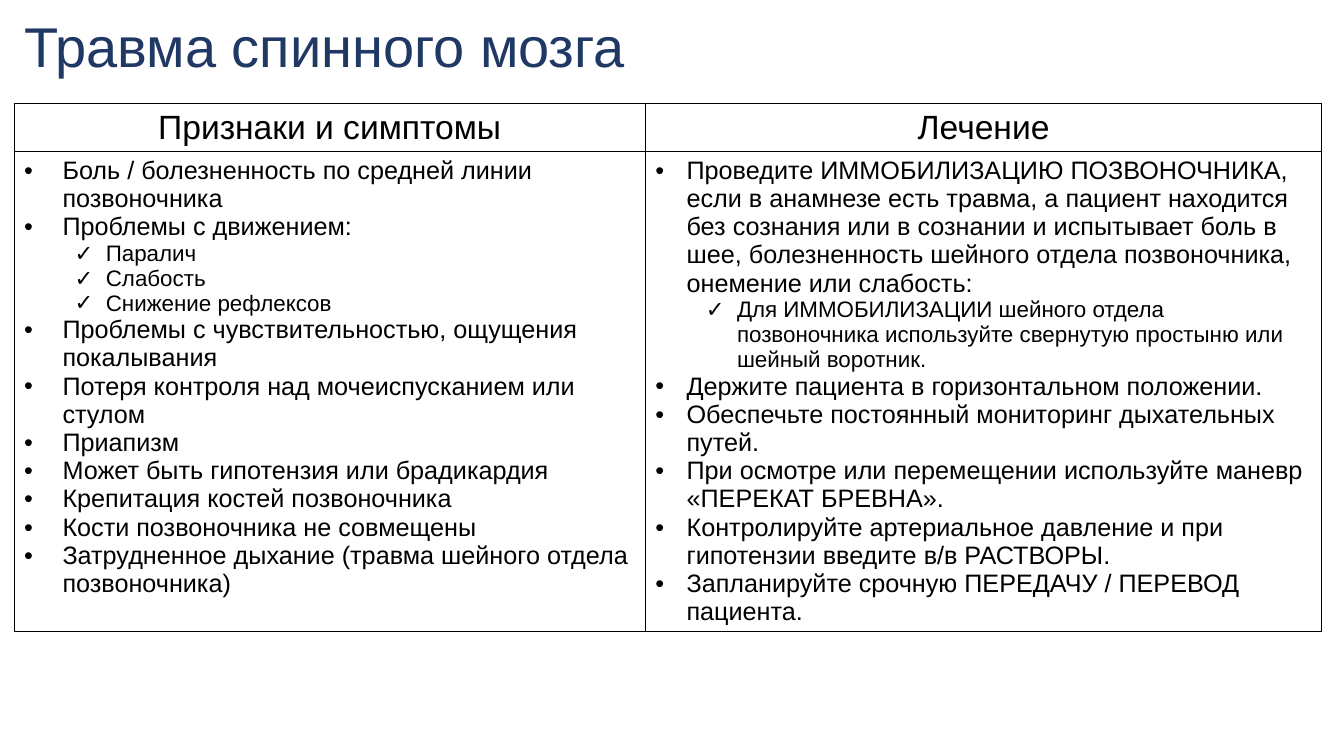
"""Build a slide on spinal cord injury: signs beside treatment."""
from lxml import etree
from pptx import Presentation
from pptx.dml.color import RGBColor
from pptx.enum.text import MSO_ANCHOR, PP_ALIGN
from pptx.oxml.ns import qn
from pptx.util import Inches, Pt

LEFT, CENTER = PP_ALIGN.LEFT, PP_ALIGN.CENTER
MIDDLE = MSO_ANCHOR.MIDDLE
NAVY = RGBColor(0x1F, 0x38, 0x64)
BLACK = RGBColor(0, 0, 0)
FONT = "Arial"
TITLE_ONLY = 5

TITLE = "Травма спинного мозга"
COLUMNS = [
    {
        "heading": "Признаки и симптомы",
        "width": 6.26,
        "hang": 0.38,
        "items": [
            (0, "Боль / болезненность по средней линии позвоночника"),
            (0, "Проблемы с движением:"),
            (1, "Паралич"),
            (1, "Слабость"),
            (1, "Снижение рефлексов"),
            (0, "Проблемы с чувствительностью, ощущения покалывания"),
            (0, "Потеря контроля над мочеиспусканием или стулом"),
            (0, "Приапизм"),
            (0, "Может быть гипотензия или брадикардия"),
            (0, "Крепитация костей позвоночника"),
            (0, "Кости позвоночника не совмещены"),
            (0, "Затрудненное дыхание (травма шейного отдела позвоночника)"),
        ],
    },
    {
        "heading": "Лечение",
        "width": 6.71,
        "hang": 0.31,
        "items": [
            (0, "Проведите ИММОБИЛИЗАЦИЮ ПОЗВОНОЧНИКА, если в анамнезе есть "
                "травма, а пациент находится без сознания или в сознании и "
                "испытывает боль в шее, болезненность шейного отдела "
                "позвоночника, онемение или слабость:"),
            (1, "Для ИММОБИЛИЗАЦИИ шейного отдела позвоночника используйте "
                "свернутую простыню или шейный воротник."),
            (0, "Держите пациента в горизонтальном положении."),
            (0, "Обеспечьте постоянный мониторинг дыхательных путей."),
            (0, "При осмотре или перемещении используйте маневр "
                "«ПЕРЕКАТ БРЕВНА»."),
            (0, "Контролируйте артериальное давление и при гипотензии "
                "введите в/в РАСТВОРЫ."),
            (0, "Запланируйте срочную ПЕРЕДАЧУ / ПЕРЕВОД пациента."),
        ],
    },
]
ROW_HEIGHTS = [0.43, 4.18]
MARGIN_LEFT, TABLE_TOP = 0.14, 1.03
BULLETS = ["•", "✓"]
BULLET_SIZES = [18, 16]
CHECK_INDENT, CHECK_HANG = 0.81, 0.31


def add_bullet(paragraph, level, hang):
    """Give a paragraph the hanging bullet of its level."""
    paragraph.level = level
    properties = paragraph._p.get_or_add_pPr()
    indent, hang = (CHECK_INDENT, CHECK_HANG) if level else (hang, hang)
    properties.set("marL", str(Inches(indent)))
    properties.set("indent", str(-Inches(hang)))
    color = etree.SubElement(properties, qn("a:buClr"))
    etree.SubElement(color, qn("a:srgbClr"), val=str(BLACK))
    etree.SubElement(properties, qn("a:buFont"), typeface=FONT)
    etree.SubElement(properties, qn("a:buChar"), char=BULLETS[level])


def write(paragraph, text, size=18, color=BLACK, align=LEFT, spacing=None):
    """Write formatted text into a paragraph."""
    paragraph.alignment = align
    if spacing:
        paragraph.line_spacing = spacing
    run = paragraph.add_run()
    run.text = text
    run.font.name = FONT
    run.font.size = Pt(size)
    run.font.color.rgb = color


def frame_cell(cell):
    """Draw thin black borders around an unfilled cell."""
    properties = cell._tc.get_or_add_tcPr()
    for side in ("a:lnL", "a:lnR", "a:lnT", "a:lnB"):
        line = etree.SubElement(properties, qn(side), w=str(Pt(1)))
        fill = etree.SubElement(line, qn("a:solidFill"))
        etree.SubElement(fill, qn("a:srgbClr"), val=str(BLACK))
    cell.fill.background()


def add_title(slide):
    """Place and format the slide title."""
    title = slide.shapes.title
    title.left, title.top = Inches(MARGIN_LEFT), Inches(0)
    title.width, title.height = Inches(12.4), Inches(0.97)
    title.text_frame.word_wrap = True
    title.text_frame.vertical_anchor = MIDDLE
    write(title.text_frame.paragraphs[0], TITLE, size=40, color=NAVY, spacing=0.9)


def add_care_table(slide):
    """Add the table of signs and treatment."""
    width = sum(column["width"] for column in COLUMNS)
    table = slide.shapes.add_table(
        len(ROW_HEIGHTS), len(COLUMNS), Inches(MARGIN_LEFT), Inches(TABLE_TOP),
        Inches(width), Inches(sum(ROW_HEIGHTS))).table
    table.first_row = table.horz_banding = False
    for row, height in zip(table.rows, ROW_HEIGHTS):
        row.height = Inches(height)
    for index, column in enumerate(COLUMNS):
        table.columns[index].width = Inches(column["width"])
        heading, body = table.cell(0, index), table.cell(1, index)
        frame_cell(heading)
        frame_cell(body)
        write(heading.text_frame.paragraphs[0], column["heading"], size=24, align=CENTER)
        for number, (level, text) in enumerate(column["items"]):
            frame = body.text_frame
            paragraph = frame.add_paragraph() if number else frame.paragraphs[0]
            add_bullet(paragraph, level, column["hang"])
            write(paragraph, text, size=BULLET_SIZES[level])


def main():
    """Create and save the presentation."""
    presentation = Presentation()
    presentation.slide_width, presentation.slide_height = Inches(13.33), Inches(7.5)
    slide = presentation.slides.add_slide(presentation.slide_layouts[TITLE_ONLY])
    add_title(slide)
    add_care_table(slide)
    presentation.save("out.pptx")


if __name__ == "__main__":
    main()
